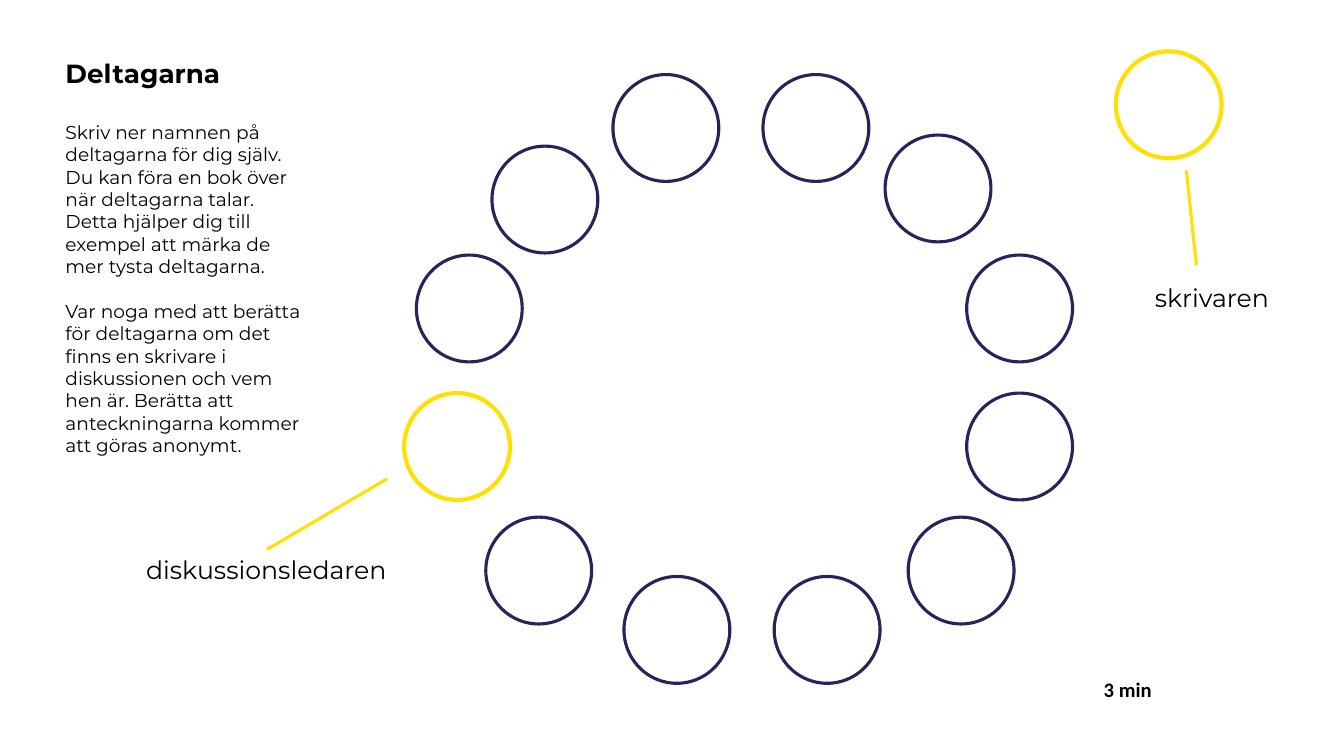
from lxml import etree
from pptx import Presentation
from pptx.dml.color import RGBColor
from pptx.enum.shapes import MSO_CONNECTOR, MSO_SHAPE
from pptx.enum.text import PP_ALIGN
from pptx.oxml.ns import qn
from pptx.util import Pt

STRAIGHT = MSO_CONNECTOR.STRAIGHT
OVAL = MSO_SHAPE.OVAL
JUSTIFY = PP_ALIGN.JUSTIFY

COLORS = {"navy": "29235C", "yellow": "FFE006", "black": "000000"}

TITLE = "Deltagarna"
BODY = [
    "Skriv ner namnen på deltagarna för dig själv. Du kan föra en bok över "
    "när deltagarna talar. Detta hjälper dig till exempel att märka de mer "
    "tysta deltagarna.",
    "Var noga med att berätta för deltagarna om det finns en skrivare i "
    "diskussionen och vem hen är. Berätta att anteckningarna kommer att "
    "göras anonymt.",
]
BODY_GAPS = [22.8, 16.2]

# Left and top of each seat, clockwise from the top
SEAT_SIZE = (75.6, 76.3)
PARTICIPANTS = [
    (545, 53.3), (632.2, 96.5), (690.5, 182.2), (690.5, 280.8),
    (648.7, 369.4), (553, 411.8), (445.7, 411.8), (347, 369.4),
    (297.4, 182.2), (351.4, 104.4), (437.8, 53.3),
]
LEADER = (288.7, 280.8)
WRITER = (797, 36.7)

POINTERS = [
    ((190.8, 392.4), (276.5, 342)),
    ((847.4, 121.7), (854.6, 189.4)),
]
ROLE_LABELS = [
    ("diskussionsledaren", (97.2, 392.4, 186.5, 28.8)),
    ("skrivaren", (817.9, 198, 96.5, 28.8)),
]


def rgb(name):
    return RGBColor.from_string(COLORS[name])


def add_seat(s, place, color, width):
    seat = s.shapes.add_shape(OVAL, *map(Pt, place + SEAT_SIZE))
    seat.shadow.inherit = False
    seat.fill.background()
    seat.line.color.rgb = rgb(color)
    seat.line.width = Pt(width)


def add_pointer(s, start, end):
    line = s.shapes.add_connector(STRAIGHT, *map(Pt, start + end))
    line.line.color.rgb = rgb("yellow")
    line.line.width = Pt(2.25)
    etree.SubElement(line._element.spPr, qn("a:effectLst"))


def add_box(s, box, inset=None, wrap=True):
    tf = s.shapes.add_textbox(*map(Pt, box)).text_frame
    tf.word_wrap = wrap
    if inset is not None:
        tf.margin_left = tf.margin_right = Pt(inset)
        tf.margin_top = tf.margin_bottom = Pt(inset)
    return tf


def set_text(p, text, size, font="Montserrat", bold=False):
    p.text = text
    r = p.runs[0]
    r.font.name = font
    r.font.size = Pt(size)
    r.font.bold = bold
    r.font.color.rgb = rgb("black")


def main():
    prs = Presentation()
    prs.slide_width, prs.slide_height = Pt(960), Pt(540)
    s = prs.slides.add_slide(prs.slide_layouts[6])

    tf = add_box(s, (31.7, 25.9, 198.7, 351.4), inset=15.1)
    set_text(tf.paragraphs[0], TITLE, 18.7, bold=True)
    for text, gap in zip(BODY, BODY_GAPS):
        p = tf.add_paragraph()
        set_text(p, text, 13.3)
        p.space_before = Pt(gap)

    for place in PARTICIPANTS:
        add_seat(s, place, "navy", 2.25)
    for place in (LEADER, WRITER):
        add_seat(s, place, "yellow", 3)
    for start, end in POINTERS:
        add_pointer(s, start, end)

    for text, box in ROLE_LABELS:
        tf = add_box(s, box, wrap=False)
        set_text(tf.paragraphs[0], text, 18)

    p = add_box(s, (779, 471.6, 94.3, 39.6), inset=9.4).paragraphs[0]
    set_text(p, "3 min", 14.7, font="Calibri", bold=True)
    p.alignment = JUSTIFY
    p.line_spacing = 1.15

    prs.save("out.pptx")


if __name__ == "__main__":
    main()
